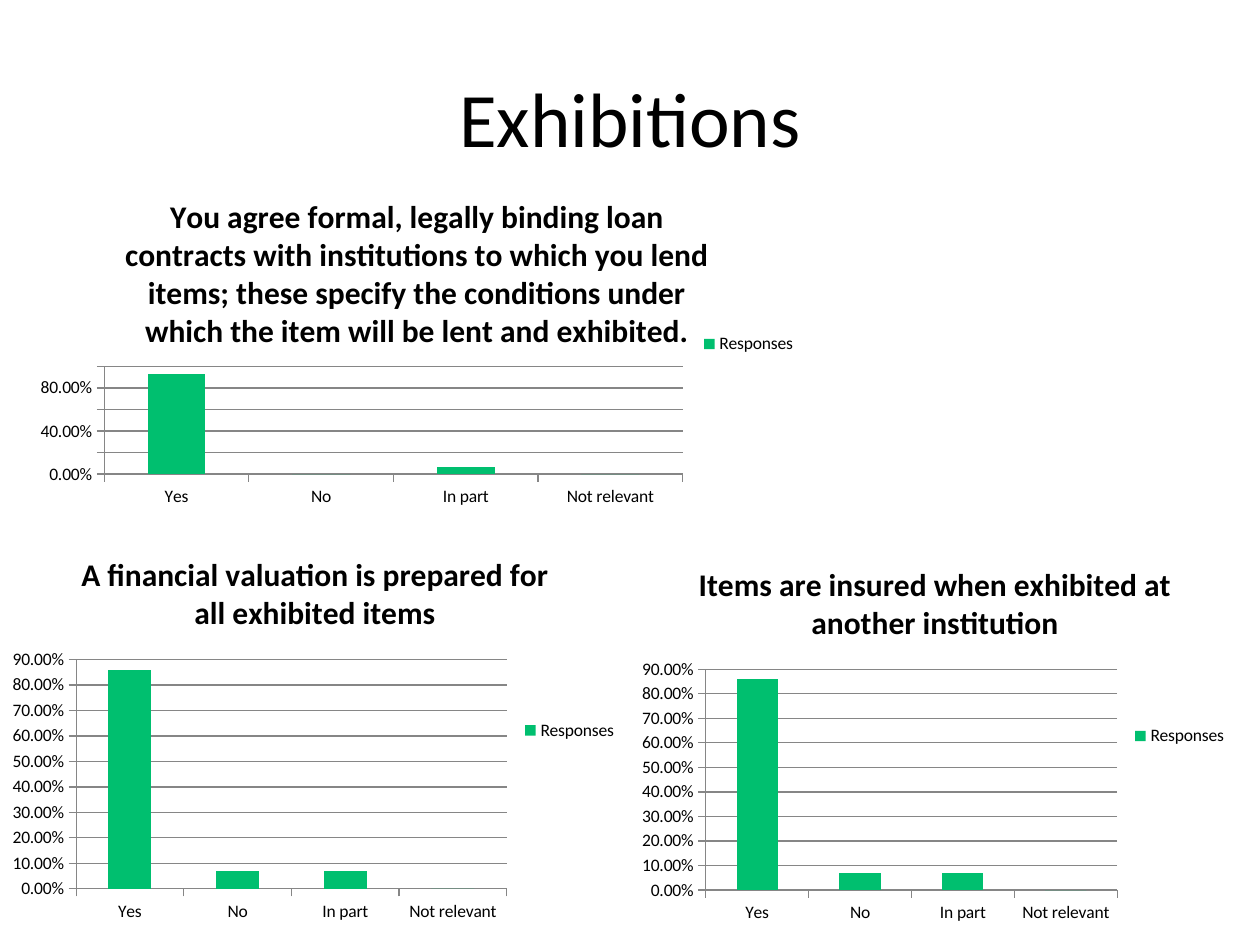
from dataclasses import dataclass

from pptx import Presentation
from pptx.chart.data import CategoryChartData
from pptx.dml.color import RGBColor
from pptx.enum.chart import XL_CHART_TYPE, XL_LEGEND_POSITION, XL_TICK_MARK
from pptx.enum.text import MSO_ANCHOR, PP_ALIGN
from pptx.util import Emu, Pt

PX_PER_INCH = 126
EMU_PER_INCH = 914400
FONT = "Calibri"
BLACK = RGBColor(0x00, 0x00, 0x00)
GREEN = RGBColor(0x00, 0xBF, 0x6F)
GREY = RGBColor(0x86, 0x86, 0x86)
COLUMN_CLUSTERED = XL_CHART_TYPE.COLUMN_CLUSTERED
LEGEND_RIGHT = XL_LEGEND_POSITION.RIGHT
TICK_OUTSIDE = XL_TICK_MARK.OUTSIDE
TITLE_ONLY_LAYOUT = 5
ANSWERS = ("Yes", "No", "In part", "Not relevant")
PERCENT_FORMAT = "0.00%"


@dataclass(frozen=True)
class Box:
    left: int
    top: int
    width: int
    height: int


@dataclass(frozen=True)
class SurveyChart:
    question: str
    box: Box
    responses: tuple[float, ...]
    axis_maximum: float
    axis_step: float


TITLE_BOX = Box(63, 38, 1134, 158)
SURVEY_CHARTS = (
    SurveyChart(
        "You agree formal, legally binding loan contracts with institutions to "
        "which you lend items; these specify the conditions under which the item "
        "will be lent and exhibited.",
        Box(25, 175, 784, 338), (0.93, 0, 0.07, 0), 1.0, 0.2,
    ),
    SurveyChart(
        "A financial valuation is prepared for all exhibited items",
        Box(0, 532, 630, 397), (0.86, 0.07, 0.07, 0), 0.9, 0.1,
    ),
    SurveyChart(
        "Items are insured when exhibited at another institution",
        Box(630, 542, 610, 388), (0.86, 0.07, 0.07, 0), 0.9, 0.1,
    ),
)


def px(length: int) -> Emu:
    return Emu(round(length * EMU_PER_INCH / PX_PER_INCH))


def set_font(font, size: int, bold: bool = False) -> None:
    font.name = FONT
    font.size = Pt(size)
    font.bold = bold
    font.color.rgb = BLACK


def set_line(line) -> None:
    line.color.rgb = GREY
    line.width = Pt(0.75)


def add_title(slide, text: str, box: Box) -> None:
    title = slide.shapes.title
    title.left, title.top = px(box.left), px(box.top)
    title.width, title.height = px(box.width), px(box.height)
    title.text_frame.text = text
    title.text_frame.vertical_anchor = MSO_ANCHOR.MIDDLE
    paragraph = title.text_frame.paragraphs[0]
    paragraph.alignment = PP_ALIGN.CENTER
    set_font(paragraph.font, 44)


def format_axes(chart, survey: SurveyChart) -> None:
    for axis in (chart.category_axis, chart.value_axis):
        axis.major_tick_mark = TICK_OUTSIDE
        set_line(axis.format.line)
    value_axis = chart.value_axis
    value_axis.minimum_scale = 0
    value_axis.maximum_scale = survey.axis_maximum
    value_axis.major_unit = survey.axis_step
    value_axis.has_major_gridlines = True
    set_line(value_axis.major_gridlines.format.line)
    value_axis.tick_labels.number_format = PERCENT_FORMAT
    value_axis.tick_labels.number_format_is_linked = False


def add_survey_chart(slide, survey: SurveyChart) -> None:
    data = CategoryChartData(number_format=PERCENT_FORMAT)
    data.categories = ANSWERS
    data.add_series("Responses", survey.responses)
    box = survey.box
    chart = slide.shapes.add_chart(
        COLUMN_CLUSTERED, px(box.left), px(box.top),
        px(box.width), px(box.height), data,
    ).chart
    set_font(chart.font, 10)

    chart.has_title = True
    title_frame = chart.chart_title.text_frame
    title_frame.text = survey.question
    set_font(title_frame.paragraphs[0].font, 18, bold=True)
    chart.chart_title.include_in_layout = False

    chart.has_legend = True
    chart.legend.position = LEGEND_RIGHT
    chart.legend.include_in_layout = False

    format_axes(chart, survey)
    plot = chart.plots[0]
    plot.vary_by_categories = False
    plot.gap_width = 150
    fill = plot.series[0].format.fill
    fill.solid()
    fill.fore_color.rgb = GREEN


def main() -> None:
    presentation = Presentation()
    presentation.slide_width, presentation.slide_height = px(1260), px(945)
    layout = presentation.slide_layouts[TITLE_ONLY_LAYOUT]
    slide = presentation.slides.add_slide(layout)
    add_title(slide, "Exhibitions", TITLE_BOX)
    for survey in SURVEY_CHARTS:
        add_survey_chart(slide, survey)
    presentation.save("out.pptx")


if __name__ == "__main__":
    main()
